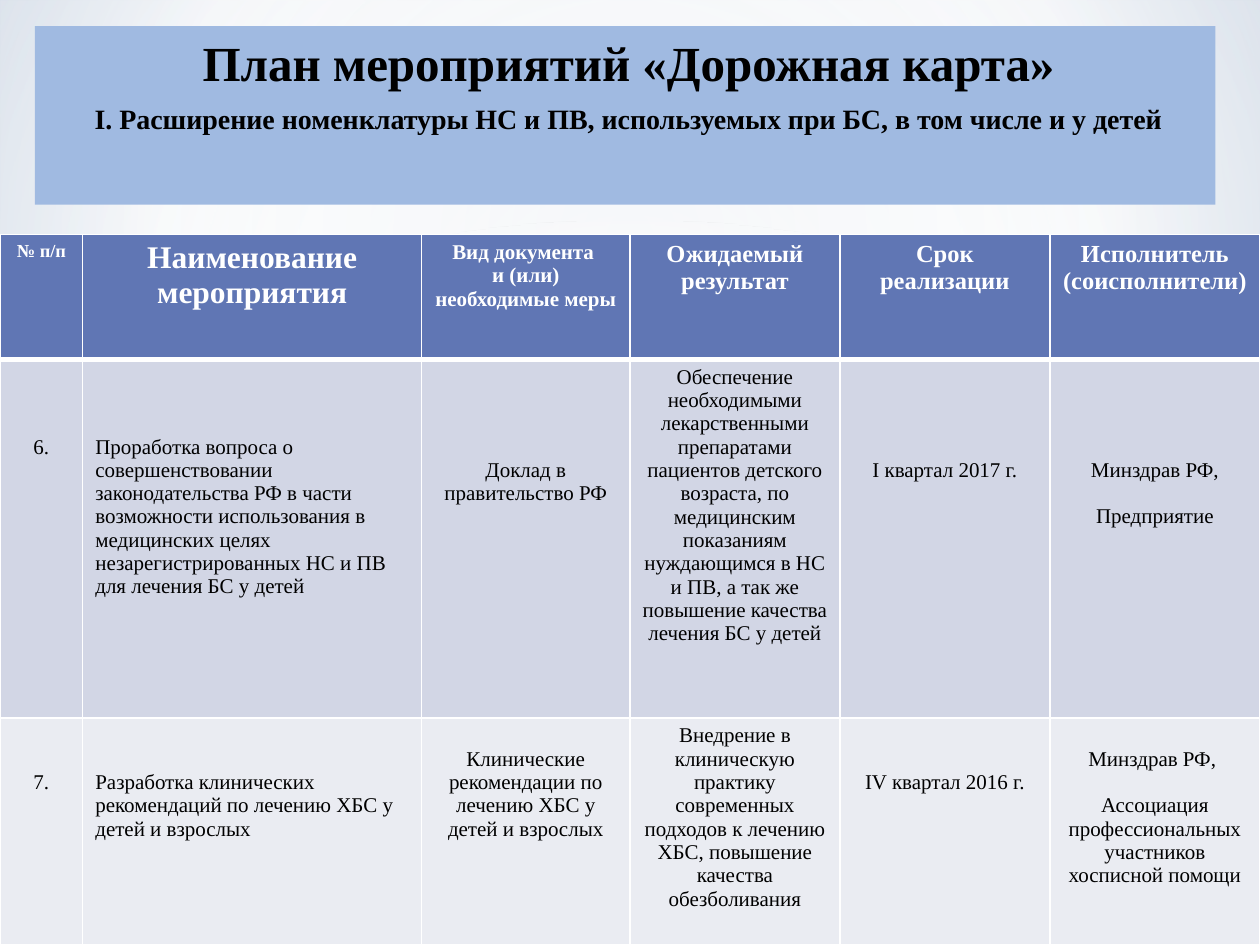
from lxml.etree import SubElement
from pptx import Presentation
from pptx.dml.color import RGBColor
from pptx.enum.shapes import MSO_SHAPE as SHAPE
from pptx.enum.text import MSO_ANCHOR as ANCHOR, PP_ALIGN as ALIGN
from pptx.oxml.ns import qn
from pptx.util import Pt

W, H = 720, 540
LINE = 13.3  # height of one 12 pt text line


def rgb(color):
    return RGBColor.from_string(color)


class Deck:
    font = "Times New Roman"
    white, black = "FFFFFF", "000000"
    header_fill, row_fills = "6076B4", ("D2D6E5", "EAECF2")

    def __init__(self):
        self.prs = Presentation()
        self.prs.slide_width, self.prs.slide_height = Pt(W), Pt(H)
        self.s = self.prs.slides.add_slide(self.prs.slide_layouts[6])

    def gradient(self, owner, fill, stops, center=None):
        """Fill with (position, color, opacity) stops: round the center rectangle, or top to bottom."""
        fill.gradient()
        grad = owner.find(".//" + qn("a:gradFill"))
        for child in list(grad):
            grad.remove(child)
        gs_list = SubElement(grad, qn("a:gsLst"))
        for pos, color, opacity in stops:
            gs = SubElement(gs_list, qn("a:gs"), pos=str(pos * 1000))
            clr = SubElement(gs, qn("a:srgbClr"), val=color)
            if opacity < 100:
                SubElement(clr, qn("a:alpha"), val=str(opacity * 1000))
        if center:
            path = SubElement(grad, qn("a:path"))
            path.set("path", "circle")
            sides = {k: str(v * 1000) for k, v in zip("ltrb", center)}
            SubElement(path, qn("a:fillToRect"), **sides)
        else:
            SubElement(grad, qn("a:lin"), ang="5400000", scaled="0")

    def background(self, stops, center):
        self.gradient(self.s._element, self.s.background.fill, stops, center)

    def shape(self, kind, x, y, w, h):
        sp = self.s.shapes.add_shape(kind, Pt(x), Pt(y), Pt(w), Pt(h))
        sp.shadow.inherit = False
        sp.line.fill.background()
        return sp

    def glow(self, kind, y, h, stops, center=None):
        sp = self.shape(kind, 0, y, W, h)
        self.gradient(sp._element, sp.fill, stops, center)

    def paragraph(self, tf, i, text, size, color, bold, align=ALIGN.CENTER):
        p = tf.paragraphs[0] if i == 0 else tf.add_paragraph()
        p.text, p.alignment = text, align
        p.font.name, p.font.size, p.font.bold = self.font, Pt(size), bold
        p.font.color.rgb = rgb(color)
        return p

    def title(self, x, y, w, h, color, lines):
        sp = self.shape(SHAPE.RECTANGLE, x, y, w, h)
        sp.fill.solid()
        sp.fill.fore_color.rgb = rgb(color)
        tf = sp.text_frame
        tf.word_wrap, tf.vertical_anchor = True, ANCHOR.TOP
        tf.margin_left, tf.margin_top = Pt(10.8), Pt(3.6)
        for i, (text, size) in enumerate(lines):
            p = self.paragraph(tf, i, text, size, self.black, True)
            p.space_before, p.space_after = Pt(3 * i), Pt(3)

    def borders(self, cell, **widths):
        tc_pr = cell._tc.get_or_add_tcPr()
        for side in "LRTB":
            width = Pt(widths.get(side, 1))
            ln = SubElement(tc_pr, qn("a:ln" + side), w=str(int(width)))
            SubElement(SubElement(ln, qn("a:solidFill")), qn("a:srgbClr"), val=self.white)

    def fill_cell(self, cell, color):
        cell.fill.solid()
        cell.fill.fore_color.rgb = rgb(color)

    def header_cell(self, cell, text, size):
        self.borders(cell, B=3)
        self.fill_cell(cell, self.header_fill)
        for i, line in enumerate(text.split("\n")):
            self.paragraph(cell.text_frame, i, line, size, self.white, True)

    def body_cell(self, cell, row, col, text, skip):
        """Write text that starts skip lines below the top of the cell."""
        self.borders(cell, T=3 if row == 1 else 1)
        self.fill_cell(cell, self.row_fills[row - 1])
        cell.margin_top = Pt(3.6 + skip * LINE)
        align = ALIGN.LEFT if col == 1 else ALIGN.CENTER
        for i, line in enumerate(text.split("\n")):
            p = self.paragraph(cell.text_frame, i, line, 12, self.black, False, align)
            p.space_before = Pt(i * LINE)

    def table(self, y, widths, heights, header, rows):
        frame = self.s.shapes.add_table(len(heights), len(widths), Pt(0), Pt(y),
                                        Pt(sum(widths)), Pt(sum(heights)))
        table = frame.table
        for column, width in zip(table.columns, widths):
            column.width = Pt(width)
        for row, height in zip(table.rows, heights):
            row.height = Pt(height)
        for col, (text, size) in enumerate(header):
            self.header_cell(table.cell(0, col), text, size)
        for row, cells in enumerate(rows, 1):
            for col, (text, skip) in enumerate(cells):
                self.body_cell(table.cell(row, col), row, col, text, skip)


HEADER = [
    ("№ п/п", 10.5),
    ("Наименование мероприятия", 18),
    ("Вид документа \nи (или) необходимые меры", 12),
    ("Ожидаемый результат", 14),
    ("Срок реализации", 14),
    ("Исполнитель (соисполнители)", 14),
]
ROWS = [
    [
        ("6.", 3),
        ("Проработка вопроса о совершенствовании законодательства РФ в части "
         "возможности использования в медицинских целях незарегистрированных "
         "НС и ПВ для лечения БС у детей", 3),
        ("Доклад в правительство РФ", 4),
        ("Обеспечение необходимыми лекарственными препаратами пациентов детского "
         "возраста, по медицинским показаниям нуждающимся в НС и ПВ, а так же "
         "повышение качества лечения БС у детей", 0),
        ("I квартал 2017 г.", 4),
        ("Минздрав РФ,\nПредприятие", 4),
    ],
    [
        ("7.", 2),
        ("Разработка клинических рекомендаций по лечению ХБС у детей и взрослых", 2),
        ("Клинические рекомендации по лечению ХБС у детей и взрослых", 1),
        ("Внедрение в клиническую практику современных подходов к лечению ХБС, "
         "повышение качества обезболивания", 0),
        ("IV квартал 2016 г.", 2),
        ("Минздрав РФ, \nАссоциация профессиональных участников хосписной помощи", 1),
    ],
]


def main():
    d = Deck()
    white, mist, middle = d.white, "E4E9EF", (50, 50, 50, 50)
    d.background([(0, "D7DFE8", 100), (60, white, 100), (100, "A3B9D4", 100)],
                 (20, 10, 20, 60))
    d.glow(SHAPE.RECTANGLE, 402, 138,
           [(0, white, 91), (37, white, 76), (100, mist, 79)], middle)
    d.glow(SHAPE.RECTANGLE, 0, 402,
           [(0, white, 89), (48, white, 62), (100, mist, 79)], middle)
    d.glow(SHAPE.RECTANGLE, 297, 180,
           [(0, white, 0), (29, white, 30), (45, mist, 40),
            (55, white, 26), (65, mist, 60), (100, white, 0)])
    d.glow(SHAPE.OVAL, 126, 402, [(0, white, 100), (56, white, 0)], middle)
    d.title(20, 15, 674.6, 102, "A0BAE1", [
        ("План мероприятий «Дорожная карта»", 28),
        ("I. Расширение номенклатуры НС и ПВ, используемых при БС, в том числе и у детей", 16),
    ])
    d.table(134, [47.3, 193.7, 119] + [120] * 3, [71.3, 205, 129.7], HEADER, ROWS)
    d.prs.save("out.pptx")


if __name__ == "__main__":
    main()
